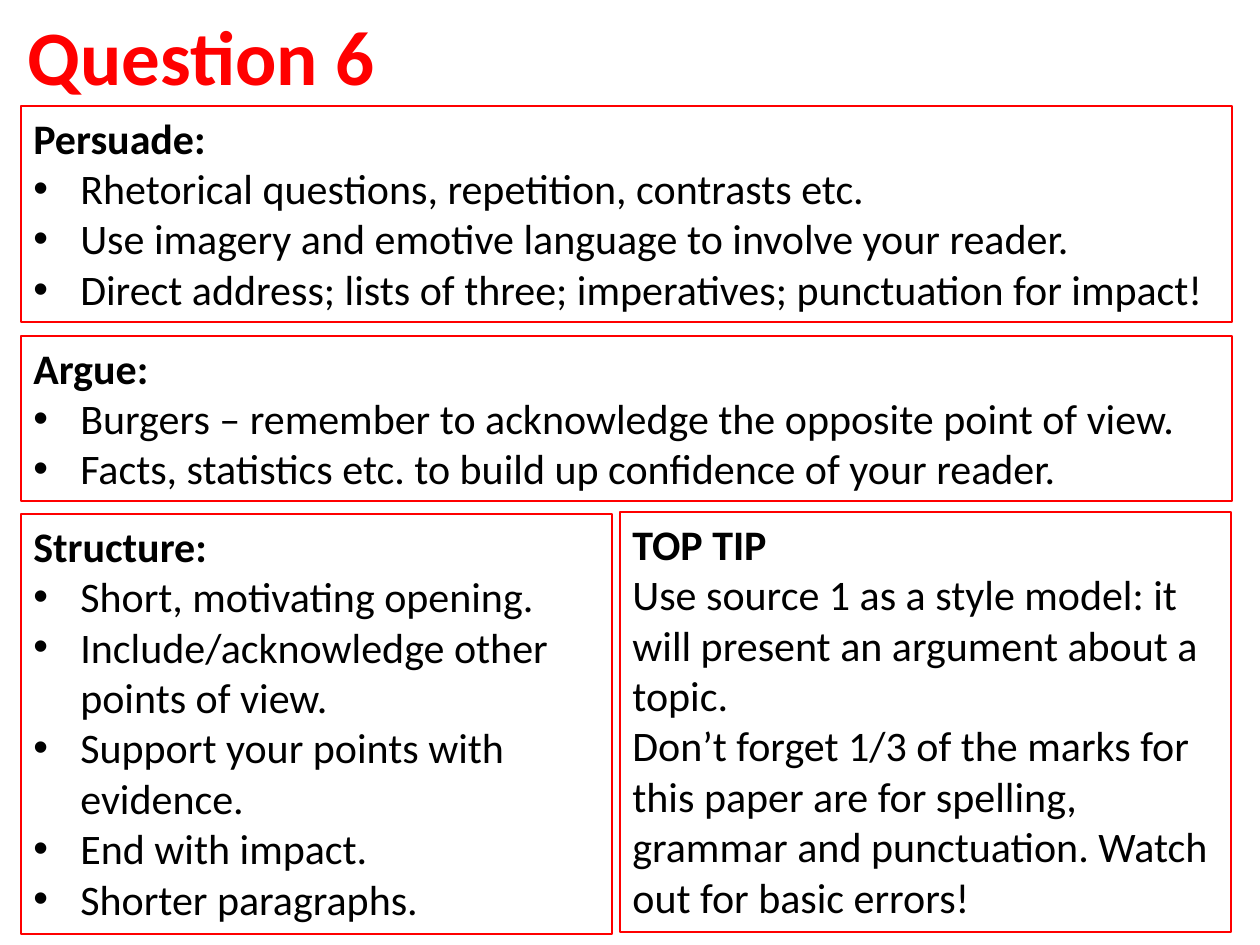
from lxml import etree
from pptx import Presentation
from pptx import util as u
from pptx.dml.color import RGBColor
from pptx.enum import shapes, text
from pptx.oxml import ns

PX_PER_INCH = 126
RED = RGBColor(0xFF, 0x00, 0x00)
BLACK = RGBColor(0x00, 0x00, 0x00)
FONT = "Calibri"
INDENT = 47
LEFT, FULL_WIDTH = 21, 1211


def px(length):
    return u.Emu(round(length * u.Inches(1) / PX_PER_INCH))


def write(para, content, size=24, color=BLACK, bold=False, bullet=False):
    """Fill a left-aligned paragraph, optionally with a hanging bullet."""
    para.alignment = text.PP_ALIGN.LEFT
    if bullet:
        properties = para._p.get_or_add_pPr()
        properties.set("marL", str(px(INDENT)))
        properties.set("indent", str(-px(INDENT)))
        font = etree.SubElement(properties, ns.qn("a:buFont"))
        font.set("typeface", "Arial")
        mark = etree.SubElement(properties, ns.qn("a:buChar"))
        mark.set("char", "•")
    span = para.add_run()
    span.text = content
    span.font.name = FONT
    span.font.size = u.Pt(size)
    span.font.bold = bold
    span.font.color.rgb = color


def add_title(page, content):
    title = page.shapes.title
    title.left, title.top, title.width, title.height = map(px, (15, -25, 1230, 160))
    title.text_frame.vertical_anchor = text.MSO_ANCHOR.MIDDLE
    write(title.text_frame.paragraphs[0], content, size=44, color=RED, bold=True)


def add_panel(page, bounds, heading, lines, bullet=True):
    box = page.shapes.add_shape(shapes.MSO_SHAPE.RECTANGLE, *map(px, bounds))
    box.shadow.inherit = False
    box.fill.background()
    box.line.color.rgb = RED
    box.line.width = u.Pt(0.75)
    frame = box.text_frame
    frame.word_wrap = True
    frame.auto_size = text.MSO_AUTO_SIZE.SHAPE_TO_FIT_TEXT
    frame.vertical_anchor = text.MSO_ANCHOR.TOP
    write(frame.paragraphs[0], heading, bold=True)
    for line in lines:
        write(frame.add_paragraph(), line, bullet=bullet)


def main():
    deck = Presentation()
    deck.slide_width, deck.slide_height = u.Inches(10), u.Inches(7.5)
    page = deck.slides.add_slide(deck.slide_layouts.get_by_name("Title Only"))
    add_title(page, "Question 6")
    add_panel(page, (LEFT, 106, FULL_WIDTH, 216), "Persuade:", [
        "Rhetorical questions, repetition, contrasts etc.",
        "Use imagery and emotive language to involve your reader.",
        "Direct address; lists of three; imperatives; punctuation for impact!",
    ])
    add_panel(page, (620, 512, 611, 420), "TOP TIP", [
        "Use source 1 as a style model: it will present an argument about a topic.",
        "Don’t forget 1/3 of the marks for this paper are for spelling, grammar "
        "and punctuation. Watch out for basic errors!",
    ], bullet=False)
    add_panel(page, (LEFT, 336, FULL_WIDTH, 165), "Argue:", [
        "Burgers – remember to acknowledge the opposite point of view.",
        "Facts, statistics etc. to build up confidence of your reader.",
    ])
    add_panel(page, (LEFT, 514, 591, 420), "Structure:", [
        "Short, motivating opening.",
        "Include/acknowledge other points of view.",
        "Support your points with evidence.",
        "End with impact.",
        "Shorter paragraphs.",
    ])
    deck.save("out.pptx")


if __name__ == "__main__":
    main()
